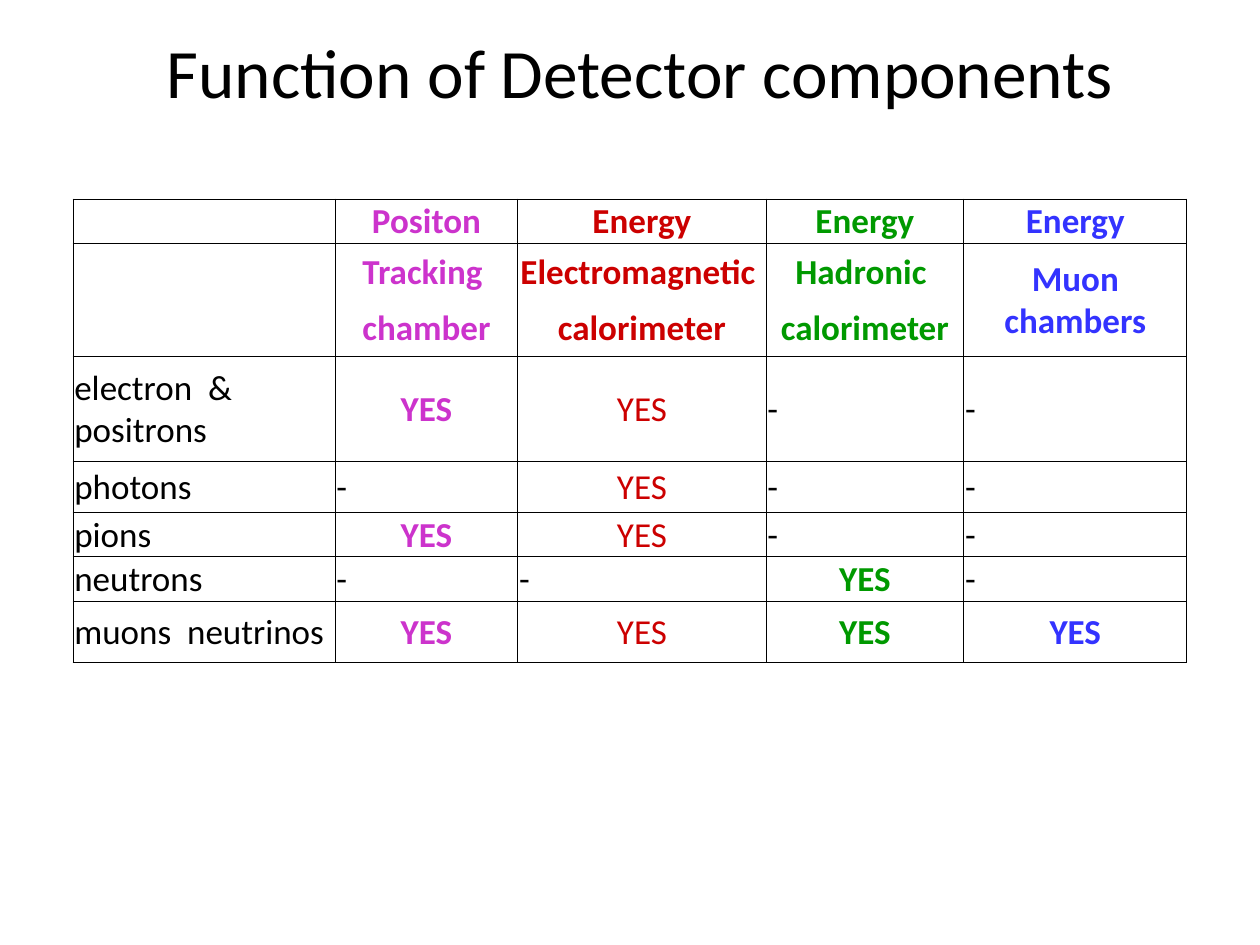
import dataclasses
import typing

import lxml.etree
import pptx
import pptx.dml.color
import pptx.enum.text
import pptx.oxml.ns
import pptx.presentation
import pptx.slide
import pptx.table
import pptx.text.text
import pptx.util

Inches = pptx.util.Inches
Align = pptx.enum.text.PP_ALIGN


@dataclasses.dataclass(frozen=True)
class Theme:
    font: str = "Calibri"
    title_size: float = 39.6
    table_size: float = 20
    border_width: float = 0.5
    black: str = "000000"
    tracking: str = "CC33CC"
    electromagnetic: str = "CC0000"
    hadronic: str = "009900"
    muon: str = "3333FF"


THEME = Theme()


@dataclasses.dataclass(frozen=True)
class Detector:
    measures: str
    name_lines: tuple[str, ...]
    color: str
    width: float
    bold_answer: bool = True


@dataclasses.dataclass(frozen=True)
class Particle:
    name: str
    seen: tuple[bool, ...]
    height: float


DETECTORS = (
    Detector("Positon", ("Tracking ", "chamber"), THEME.tracking, 1.45),
    Detector("Energy", ("Electromagnetic ", "calorimeter"), THEME.electromagnetic, 1.97, False),
    Detector("Energy", ("Hadronic ", "calorimeter"), THEME.hadronic, 1.57),
    Detector("Energy", ("Muon chambers",), THEME.muon, 1.77),
)
PARTICLES = (
    Particle("electron  & positrons", (True, True, False, False), 0.83),
    Particle("photons", (False, True, False, False), 0.41),
    Particle("pions", (True, True, False, False), 0.35),
    Particle("neutrons", (False, False, True, False), 0.35),
    Particle("muons  neutrinos", (True, True, True, True), 0.49),
)
NAME_WIDTH = 2.08
HEADER_HEIGHTS = (0.35, 0.45, 0.45)


def write_text(
    frame: pptx.text.text.TextFrame,
    text: str,
    size: float,
    color: str = THEME.black,
    bold: bool = False,
    alignment: Align = Align.CENTER,
) -> None:
    paragraph = frame.paragraphs[0]
    paragraph.alignment = alignment
    run = paragraph.add_run()
    run.text = text
    run.font.name = THEME.font
    run.font.size = pptx.util.Pt(size)
    run.font.bold = bold
    run.font.color.rgb = pptx.dml.color.RGBColor.from_string(color)


def write_cell(cell: pptx.table._Cell, text: str, **style: typing.Any) -> None:
    write_text(cell.text_frame, text, THEME.table_size, **style)


def format_cell(cell: pptx.table._Cell, open_side: str = "") -> None:
    cell.vertical_anchor = pptx.enum.text.MSO_ANCHOR.MIDDLE
    cell.margin_left = cell.margin_right = cell.margin_top = Inches(0.01)
    cell.margin_bottom = Inches(0)
    properties = cell._tc.get_or_add_tcPr()
    qualified = pptx.oxml.ns.qn
    for side in "LRTB":
        line = lxml.etree.SubElement(properties, qualified(f"a:ln{side}"))
        line.set("w", str(int(pptx.util.Pt(THEME.border_width))))
        if side == open_side:
            lxml.etree.SubElement(line, qualified("a:noFill"))
        else:
            fill = lxml.etree.SubElement(line, qualified("a:solidFill"))
            lxml.etree.SubElement(fill, qualified("a:srgbClr")).set("val", THEME.black)
    cell.fill.background()


def add_title(slide: pptx.slide.Slide) -> None:
    shape = slide.shapes.add_textbox(Inches(0.58), Inches(0.17), Inches(9), Inches(0.78))
    frame = shape.text_frame
    frame.word_wrap = True
    frame.vertical_anchor = pptx.enum.text.MSO_ANCHOR.MIDDLE
    write_text(frame, "Function of Detector components", THEME.title_size)


def add_detector_table(slide: pptx.slide.Slide) -> None:
    widths = [NAME_WIDTH] + [detector.width for detector in DETECTORS]
    heights = list(HEADER_HEIGHTS) + [particle.height for particle in PARTICLES]
    table = slide.shapes.add_table(
        len(heights), len(widths), Inches(0.58), Inches(1.58),
        Inches(sum(widths)), Inches(sum(heights)),
    ).table
    table.first_row = table.horz_banding = False
    for column, width in zip(table.columns, widths):
        column.width = Inches(width)
    for row, height in zip(table.rows, heights):
        row.height = Inches(height)

    split_columns = [
        index for index, detector in enumerate(DETECTORS, 1) if len(detector.name_lines) > 1
    ]
    for row_index in range(len(heights)):
        for column_index in range(len(widths)):
            open_side = {1: "B", 2: "T"}.get(row_index, "") if column_index in split_columns else ""
            format_cell(table.cell(row_index, column_index), open_side)
    for column_index in range(len(widths)):
        if column_index not in split_columns:
            table.cell(1, column_index).merge(table.cell(2, column_index))

    for column_index, detector in enumerate(DETECTORS, 1):
        for row_index, text in enumerate((detector.measures, *detector.name_lines)):
            write_cell(table.cell(row_index, column_index), text, color=detector.color, bold=True)

    for row_index, particle in enumerate(PARTICLES, len(HEADER_HEIGHTS)):
        write_cell(table.cell(row_index, 0), particle.name, alignment=Align.LEFT)
        for column_index, (detector, seen) in enumerate(zip(DETECTORS, particle.seen), 1):
            cell = table.cell(row_index, column_index)
            if seen:
                write_cell(cell, "YES", color=detector.color, bold=detector.bold_answer)
            else:
                write_cell(cell, "-", alignment=Align.LEFT)


def main() -> None:
    presentation = pptx.Presentation()
    presentation.slide_width = Inches(10)
    presentation.slide_height = Inches(7.5)
    slide = presentation.slides.add_slide(presentation.slide_layouts[6])
    add_title(slide)
    add_detector_table(slide)
    presentation.save("out.pptx")


if __name__ == "__main__":
    main()
